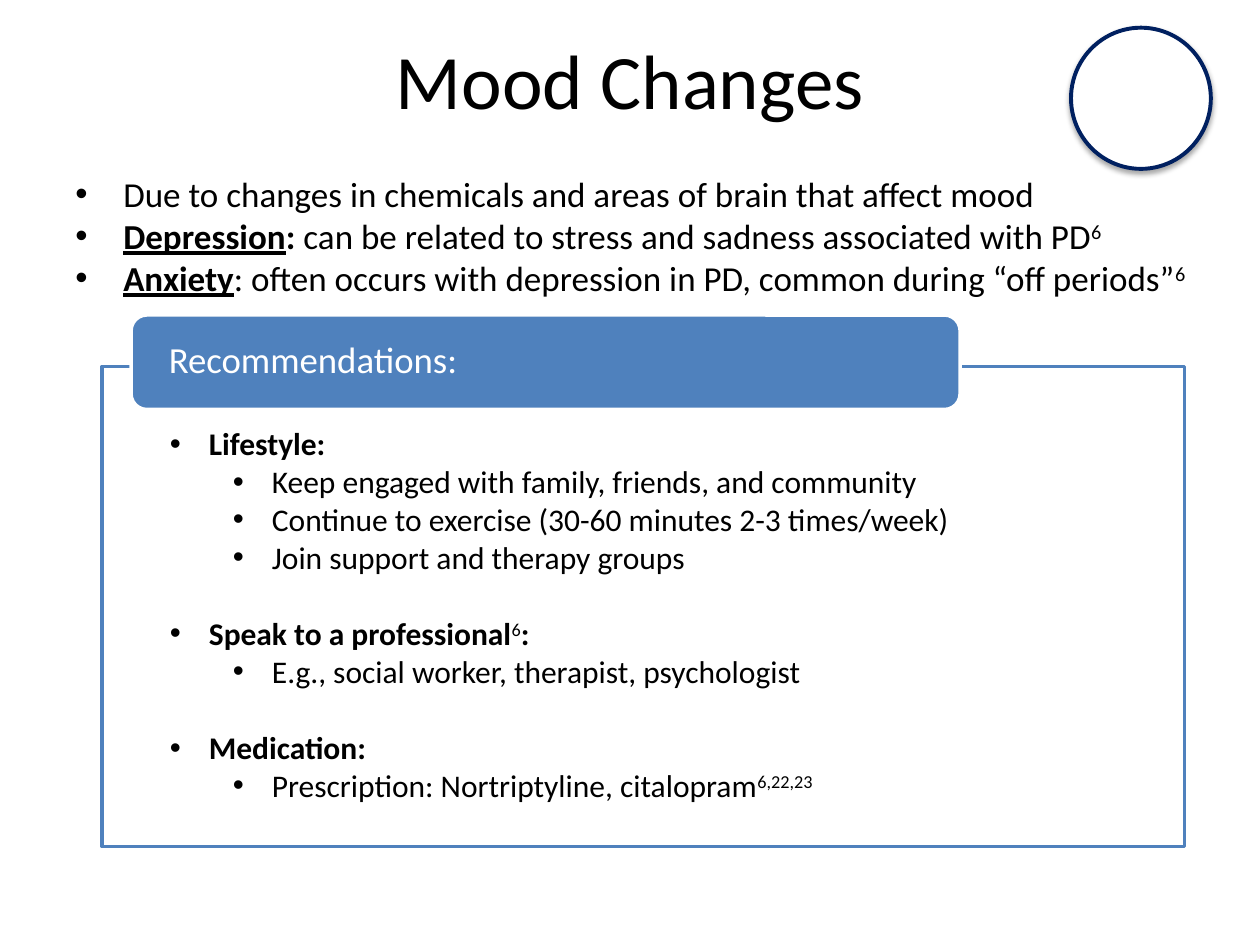
"""Build the Mood Changes slide with its recommendations panel."""
from dataclasses import dataclass
from typing import NamedTuple

from lxml.etree import SubElement
from pptx import Presentation
from pptx.dml.color import RGBColor
from pptx.enum.shapes import MSO_SHAPE as Preset
from pptx.enum.text import MSO_ANCHOR as Anchor, PP_ALIGN as Align
from pptx.oxml.ns import qn
from pptx.util import Inches, Pt


@dataclass(frozen=True)
class Theme:
    font: str = "Calibri"
    text: str = "000000"
    white: str = "FFFFFF"
    blue: str = "4F81BD"
    navy: str = "002060"
    title_size: int = 44
    intro_size: int = 20
    header_size: int = 21
    detail_size: int = 18
    group_gap: int = 22


class Box(NamedTuple):
    left: float
    top: float
    width: float
    height: float


class Panel(NamedTuple):
    preset: Preset
    box: Box
    fill: str
    line: str
    line_width: float
    opacity: int = 100
    shadow: bool = False


class Piece(NamedTuple):
    text: str
    bold: bool = False
    underline: bool = False
    superscript: bool = False


class Bullet(NamedTuple):
    pieces: tuple[Piece, ...]
    level: int = 0
    space_before: int = 0


THEME = Theme()

PANELS = (
    Panel(Preset.OVAL, Box(8.5, 0.22, 1.11, 1.12), THEME.white, THEME.navy, 2.25, shadow=True),
    Panel(Preset.RECTANGLE, Box(0.81, 2.91, 8.59, 3.81), THEME.white, THEME.blue, 2, 90),
    Panel(Preset.ROUNDED_RECTANGLE, Box(1.04, 2.5, 6.58, 0.75), THEME.blue, THEME.white, 2),
)

INTRO = (
    Bullet((Piece("Due to changes\u00a0in chemicals and areas of brain that affect mood"),)),
    Bullet((
        Piece("Depression", bold=True, underline=True),
        Piece(": ", bold=True),
        Piece("can be related to stress and sadness associated with PD"),
        Piece("6", superscript=True),
    )),
    Bullet((
        Piece("Anxiety", bold=True, underline=True),
        Piece(": often occurs with depression in PD, common during “off periods”"),
        Piece("6", superscript=True),
    )),
)

RECOMMENDATIONS = (
    Bullet((Piece("Lifestyle:", bold=True),)),
    Bullet((Piece("Keep engaged with family, friends, and community"),), 1),
    Bullet((Piece("Continue to exercise (30-60 minutes 2-3 times/week)"),), 1),
    Bullet((Piece("Join support and therapy groups"),), 1),
    Bullet((
        Piece("Speak to a professional", bold=True),
        Piece("6", superscript=True),
        Piece(":", bold=True),
    ), space_before=THEME.group_gap),
    Bullet((Piece("E.g., social worker, therapist, psychologist"),), 1),
    Bullet((Piece("Medication:", bold=True),), space_before=THEME.group_gap),
    Bullet((
        Piece("Prescription: Nortriptyline, citalopram"),
        Piece("6,22,23", superscript=True),
    ), 1),
)


def set_format(target, values: dict) -> None:
    """Set every named attribute on the target."""
    for name, value in values.items():
        setattr(target, name, value)


def add_piece(paragraph, piece: Piece, size: int, color: str) -> None:
    """Append one formatted run to the paragraph."""
    run = paragraph.add_run()
    run.text = piece.text
    set_format(run.font, {
        "name": THEME.font, "size": Pt(size),
        "bold": piece.bold, "underline": piece.underline,
    })
    run.font.color.rgb = RGBColor.from_string(color)
    if piece.superscript:
        run.font._element.set("baseline", "30000")


def add_panel(slide, panel: Panel) -> None:
    """Draw a preset shape with its fill, outline and optional shadow."""
    shape = slide.shapes.add_shape(panel.preset, *map(Inches, panel.box))
    shape.shadow.inherit = False
    shape.fill.solid()
    shape.fill.fore_color.rgb = RGBColor.from_string(panel.fill)
    shape.line.color.rgb = RGBColor.from_string(panel.line)
    shape.line.width = Pt(panel.line_width)
    properties = shape._element.spPr
    if panel.opacity < 100:
        color = properties.find(qn("a:solidFill")).find(qn("a:srgbClr"))
        SubElement(color, qn("a:alpha"), val=str(panel.opacity * 1000))
    if panel.shadow:
        shadow = SubElement(
            properties.find(qn("a:effectLst")), qn("a:outerShdw"),
            blurRad=str(Pt(3.1)), dist=str(Pt(1.8)), dir="5400000", rotWithShape="0",
        )
        color = SubElement(shadow, qn("a:srgbClr"), val=THEME.text)
        SubElement(color, qn("a:alpha"), val="35000")


def add_text_frame(slide, box: Box):
    """Add a wrapping text box and return its text frame."""
    frame = slide.shapes.add_textbox(*map(Inches, box)).text_frame
    frame.word_wrap = True
    return frame


def add_bullets(slide, box: Box, bullets: tuple[Bullet, ...], size: int, hang: float) -> None:
    """Write a bulleted list with hanging indents."""
    frame = add_text_frame(slide, box)
    for index, bullet in enumerate(bullets):
        paragraph = frame.add_paragraph() if index else frame.paragraphs[0]
        set_format(paragraph, {"level": bullet.level, "space_before": Pt(bullet.space_before)})
        properties = paragraph._p.get_or_add_pPr()
        properties.set("marL", str(Inches(hang + 0.5 * bullet.level)))
        properties.set("indent", str(Inches(-hang)))
        SubElement(properties, qn("a:buFont"), typeface="Arial")
        SubElement(properties, qn("a:buChar"), char="•")
        for piece in bullet.pieces:
            add_piece(paragraph, piece, size, THEME.text)


def add_title(slide, box: Box, text: str) -> None:
    """Place and format the title placeholder."""
    title = slide.shapes.title
    set_format(title, dict(zip(Box._fields, map(Inches, box))))
    title.text_frame.vertical_anchor = Anchor.MIDDLE
    paragraph = title.text_frame.paragraphs[0]
    paragraph.alignment = Align.CENTER
    add_piece(paragraph, Piece(text), THEME.title_size, THEME.text)


def add_header(slide, box: Box, text: str) -> None:
    """Write the label of the recommendations panel."""
    frame = add_text_frame(slide, box)
    set_format(frame, {
        "vertical_anchor": Anchor.MIDDLE,
        "margin_left": Inches(0.26), "margin_right": Inches(0.26),
        "margin_top": 0, "margin_bottom": 0,
    })
    frame.paragraphs[0].line_spacing = 0.9
    add_piece(frame.paragraphs[0], Piece(text), THEME.header_size, THEME.white)


def main() -> None:
    """Build and save the presentation."""
    presentation = Presentation()
    set_format(presentation, {"slide_width": Inches(10), "slide_height": Inches(7.5)})
    slide = presentation.slides.add_slide(presentation.slide_layouts[5])
    add_title(slide, Box(0.5, 0, 9, 1.25), "Mood Changes")
    for panel in PANELS:
        add_panel(slide, panel)
    add_bullets(slide, Box(0.5, 1.32, 9.35, 1.11), INTRO, THEME.intro_size, 0.38)
    add_header(slide, Box(1.08, 2.53, 6.51, 0.68), "Recommendations:")
    add_bullets(slide, Box(1.25, 3.32, 7.64, 3.43), RECOMMENDATIONS, THEME.detail_size, 0.31)
    presentation.save("out.pptx")


if __name__ == "__main__":
    main()
